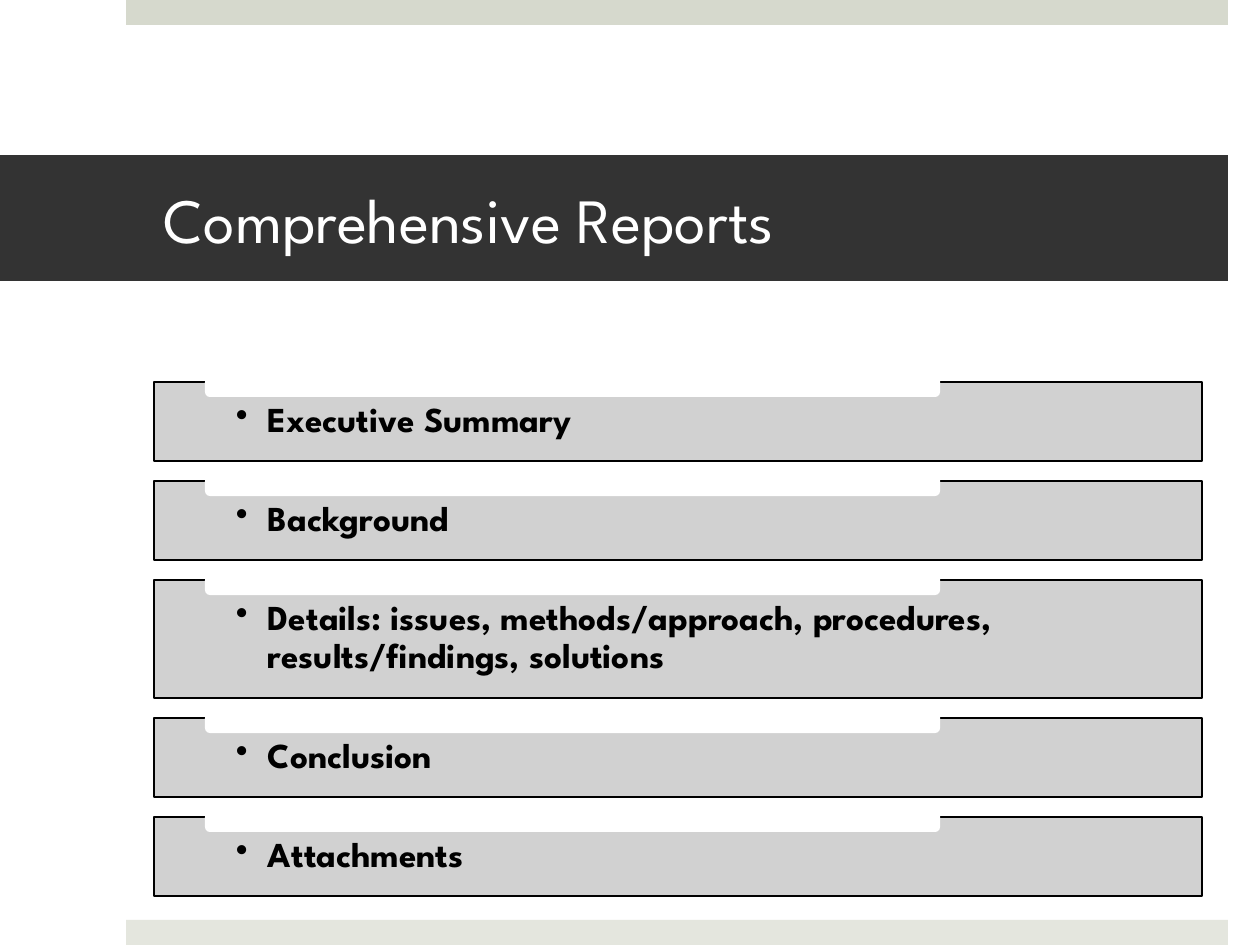
from lxml import etree
from pptx import Presentation
from pptx import util as u
from pptx.dml.color import RGBColor
from pptx.enum import shapes, text
from pptx.oxml.ns import qn

SECTIONS = [
    ("Executive Summary", 1),
    ("Background", 1),
    ("Details: issues, methods/approach, procedures, results/findings, solutions", 2),
    ("Conclusion", 1),
    ("Attachments", 1),
]
BAR_HEIGHT = {1: 79, 2: 118}  # by number of text lines
BAR_GAP = 20
FIRST_BAR_TOP = 382


def px(length):
    return u.Emu(round(length * 914400 / 126))


def color(hex_code):
    return RGBColor.from_string(hex_code)


class ReportSlide:
    font = "League Spartan"
    dark, bar_gray, white, black = "333333", "CCCCCC", "FFFFFF", "000000"

    def __init__(self, deck):
        self.slide = deck.slides.add_slide(deck.slide_layouts[5])

    def box(self, left, top, width, height, fill, kind=shapes.MSO_SHAPE.RECTANGLE):
        box = self.slide.shapes.add_shape(kind, px(left), px(top), px(width), px(height))
        box.shadow.inherit = False
        box.fill.solid()
        box.fill.fore_color.rgb = color(fill)
        box.line.fill.background()
        return box

    def label(self, shape, words, size, ink, margins, anchor, bold=False):
        frame = shape.text_frame
        frame.word_wrap = True
        frame.auto_size = text.MSO_AUTO_SIZE.NONE
        frame.vertical_anchor = anchor
        frame.margin_left, frame.margin_top, frame.margin_right, frame.margin_bottom = map(px, margins)
        frame.text = words
        paragraph = frame.paragraphs[0]
        paragraph.alignment = text.PP_ALIGN.LEFT
        paragraph.font.name = self.font
        paragraph.font.size = u.Pt(size)
        paragraph.font.bold = bold
        paragraph.font.color.rgb = color(ink)
        return paragraph

    def title(self, words):
        title = self.slide.shapes.title
        title.left, title.top, title.width, title.height = map(px, (0, 155, 1228, 126))
        title.fill.solid()
        title.fill.fore_color.rgb = color(self.dark)
        self.label(title, words, 36, self.white, (164, 6, 38, 6), text.MSO_ANCHOR.MIDDLE)

    def section(self, words, top, height):
        """Draw a bulleted bar with a blank tab over its top edge."""
        bar = self.box(154, top, 1048, height, self.bar_gray)
        bar.line.color.rgb = color(self.black)
        bar.line.width = u.Pt(1)
        fill_color = bar.element.spPr.find(qn("a:solidFill"))[0]
        etree.SubElement(fill_color, qn("a:alpha"), val="90000")
        paragraph = self.label(bar, words, 20, self.black, (82, 20, 82, 20),
                               text.MSO_ANCHOR.TOP, bold=True)
        paragraph.line_spacing = 0.9
        self.bullet(paragraph, 32)
        self.box(205, top - 14, 735, 29, self.white, shapes.MSO_SHAPE.ROUNDED_RECTANGLE)

    def bullet(self, paragraph, indent):
        properties = paragraph._p.get_or_add_pPr()
        properties.set("marL", str(px(indent)))
        properties.set("indent", str(-px(indent)))
        mark = etree.Element(qn("a:buChar"), char="•")
        properties.find(qn("a:defRPr")).addprevious(mark)


def main():
    deck = Presentation()
    deck.slide_width, deck.slide_height = px(1260), px(945)
    report = ReportSlide(deck)
    report.box(126, 0, 1102, 25, "D6D9CD")
    report.box(126, 920, 1102, 25, "E4E6DE")
    report.title("Comprehensive Reports")
    top = FIRST_BAR_TOP
    for words, lines in SECTIONS:
        report.section(words, top, BAR_HEIGHT[lines])
        top += BAR_HEIGHT[lines] + BAR_GAP
    deck.save("out.pptx")


if __name__ == "__main__":
    main()
